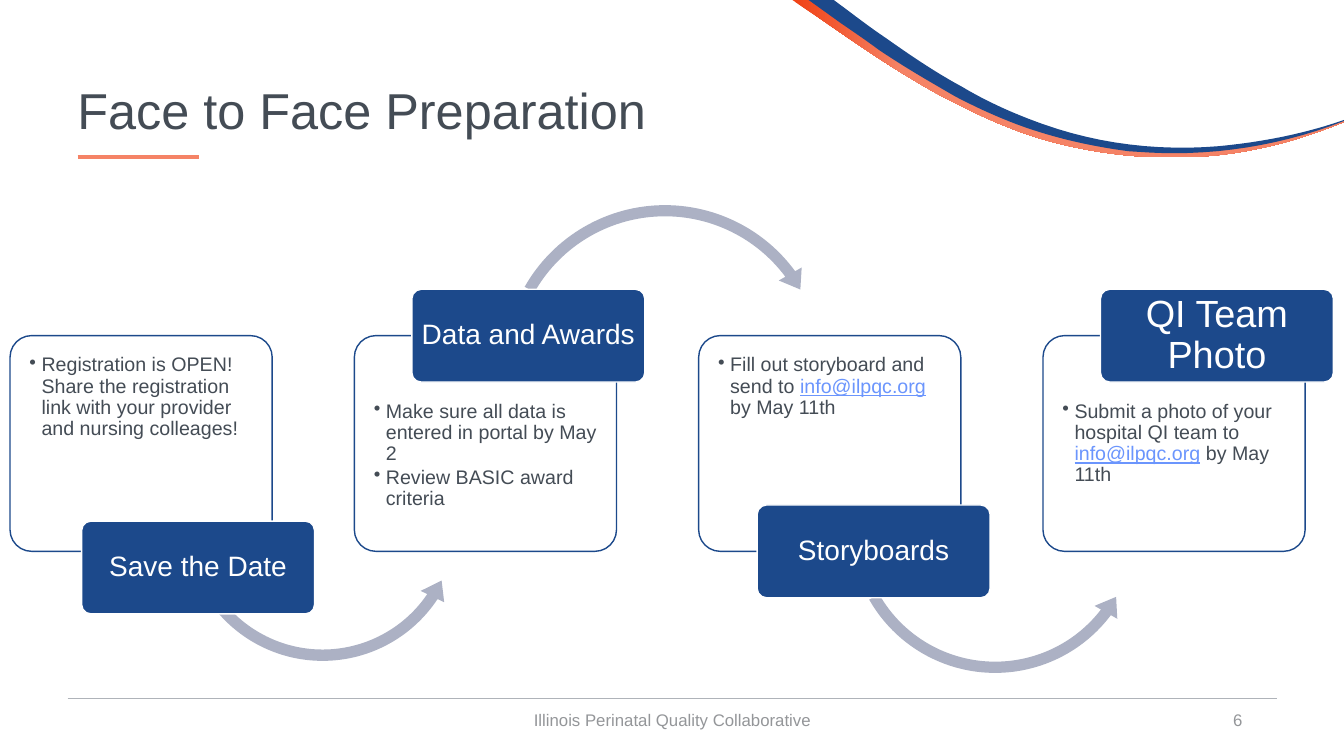
import pptx
import pptx.util
import pptx.dml.color
import pptx.enum.shapes
import pptx.enum.text
import pptx.oxml.ns
from lxml import etree

Inches = pptx.util.Inches
Pt = pptx.util.Pt
RGBColor = pptx.dml.color.RGBColor
MSO_SHAPE = pptx.enum.shapes.MSO_SHAPE
ALIGN = pptx.enum.text.PP_ALIGN
ANCHOR = pptx.enum.text.MSO_ANCHOR
qn = pptx.oxml.ns.qn

WHITE = RGBColor(0xFF, 0xFF, 0xFF)
NAVY = RGBColor(0x1C, 0x49, 0x8B)
ORANGE = RGBColor(0xF0, 0x41, 0x15)
CORAL = RGBColor(0xF5, 0x83, 0x66)
SLATE = RGBColor(0x44, 0x4C, 0x55)
GREY = RGBColor(0x94, 0x96, 0x99)
RULE = RGBColor(0xAF, 0xB3, 0xB9)
ARROW = RGBColor(0xAC, 0xB1, 0xC4)
LINK = RGBColor(0x6B, 0x95, 0xFD)

EMAIL = "info@ilpqc.org"
CARD_LEFT, CARD_TOP, CARD_PITCH = 0.1, 3.33, 3.415
CARD_W, CARD_H = 2.6, 2.14
LABEL_W, LABEL_H = 2.31, 0.92

# Swooshes: start point, then line ends (2 numbers) or Bezier curves (6 numbers)
CORAL_SWOOSH = [
    (7.86, 0), (8.05, 0), (8.1, 0.04),
    (8.34, 0.21, 8.58, 0.38, 8.82, 0.54), (9.07, 0.71, 9.32, 0.86, 9.58, 0.99),
    (9.84, 1.13, 10.11, 1.24, 10.39, 1.33), (10.8, 1.46, 11.24, 1.52, 11.68, 1.52),
    (12.24, 1.52, 12.8, 1.41, 13.33, 1.2), (13.33, 1.21),
    (12.8, 1.43, 12.25, 1.56, 11.69, 1.56), (11.24, 1.57, 10.8, 1.51, 10.37, 1.39),
    (10.09, 1.31, 9.81, 1.19, 9.55, 1.06), (9.28, 0.93, 9.03, 0.78, 8.78, 0.62),
    (8.53, 0.46, 8.29, 0.29, 8.04, 0.12),
]
NAVY_SWOOSH = [
    (8.02, 0), (8.27, 0), (8.43, 0.12),
    (8.55, 0.21, 8.67, 0.3, 8.79, 0.38), (9.03, 0.55, 9.28, 0.72, 9.54, 0.86),
    (9.79, 1.01, 10.06, 1.13, 10.34, 1.23), (10.9, 1.43, 11.5, 1.5, 12.09, 1.45),
    (12.51, 1.41, 12.93, 1.33, 13.33, 1.19), (13.33, 1.2),
    (12.8, 1.41, 12.22, 1.52, 11.64, 1.52), (11.49, 1.52, 11.34, 1.51, 11.19, 1.5),
    (10.89, 1.46, 10.6, 1.4, 10.31, 1.31), (10.02, 1.22, 9.75, 1.1, 9.48, 0.96),
    (9.22, 0.81, 8.96, 0.66, 8.71, 0.49), (8.59, 0.4, 8.47, 0.32, 8.34, 0.23),
]


def trace(segments, steps=12):
    """Turn lines and Bezier curves into a list of points."""
    points = [segments[0]]
    for seg in segments[1:]:
        if len(seg) == 2:
            points.append(seg)
            continue
        ctrl = [points[-1], seg[:2], seg[2:4], seg[4:]]
        for n in range(1, steps + 1):
            t = n / steps
            weights = ((1 - t) ** 3, 3 * t * (1 - t) ** 2, 3 * t * t * (1 - t), t ** 3)
            points.append(tuple(sum(w * c[axis] for w, c in zip(weights, ctrl))
                                for axis in (0, 1)))
    return points


class Deck:
    font = "Arial"

    def __init__(self):
        self.prs = pptx.Presentation()
        self.prs.slide_width, self.prs.slide_height = Inches(13.33), Inches(7.5)
        self.slide = self.prs.slides.add_slide(self.prs.slide_layouts[6])

    def style(self, run, size, color):
        run.font.name, run.font.size, run.font.color.rgb = self.font, Pt(size), color

    def frame(self, sp, margins, anchor):
        tf = sp.text_frame
        tf.word_wrap, tf.vertical_anchor = True, anchor
        tf.margin_left, tf.margin_top, tf.margin_right, tf.margin_bottom = map(Inches, margins)
        return tf

    def text(self, x, y, w, h, text, size, color, align=ALIGN.LEFT):
        sp = self.slide.shapes.add_textbox(Inches(x), Inches(y), Inches(w), Inches(h))
        tf = self.frame(sp, (0.1, 0.05, 0.1, 0.05), ANCHOR.MIDDLE)
        tf.text = text
        p = tf.paragraphs[0]
        p.alignment, p.line_spacing = align, 0.9
        self.style(p.runs[0], size, color)

    def shape(self, kind, x, y, w, h, fill, line=None, adjust=(0.1,)):
        sp = self.slide.shapes.add_shape(kind, Inches(x), Inches(y), Inches(w), Inches(h))
        sp.shadow.inherit = False
        for i, value in enumerate(adjust):
            sp.adjustments[i] = value
        sp.fill.solid()
        sp.fill.fore_color.rgb = fill
        if line is None:
            sp.line.fill.background()
        else:
            sp.line.color.rgb, sp.line.width = line, Pt(1)
        return sp

    def card(self, x, bullets, text_top):
        sp = self.shape(MSO_SHAPE.ROUNDED_RECTANGLE, x, CARD_TOP, CARD_W, CARD_H, WHITE, NAVY)
        color = sp.fill._xPr.find(".//" + qn("a:srgbClr"))
        etree.SubElement(color, qn("a:alpha"), val="90000")
        tf = self.frame(sp, (0.13, text_top, 0.13, 0.13), ANCHOR.TOP)
        for i, parts in enumerate(bullets):
            p = tf.add_paragraph() if i else tf.paragraphs[0]
            pPr = p._p.get_or_add_pPr()
            pPr.set("marL", str(Inches(0.12)))
            pPr.set("indent", str(-Inches(0.12)))
            etree.SubElement(pPr, qn("a:buChar"), char="•")
            p.alignment, p.line_spacing, p.space_after = ALIGN.LEFT, 0.9, Pt(2)
            for part in parts:
                r = p.add_run()
                r.text = part
                self.style(r, 14, LINK if part == EMAIL else SLATE)
                r.font.underline = True if part == EMAIL else None

    def label(self, x, y, text, size):
        sp = self.shape(MSO_SHAPE.ROUNDED_RECTANGLE, x, y, LABEL_W, LABEL_H, NAVY, WHITE)
        tf = self.frame(sp, (0.04, 0.03, 0.04, 0.03), ANCHOR.MIDDLE)
        tf.text = text
        p = tf.paragraphs[0]
        p.alignment, p.line_spacing = ALIGN.CENTER, 0.9
        self.style(p.runs[0], size, WHITE)

    def rule(self, x1, x2, y, color, width):
        line = self.slide.shapes.add_connector(
            pptx.enum.shapes.MSO_CONNECTOR.STRAIGHT,
            Inches(x1), Inches(y), Inches(x2), Inches(y))
        line.line.color.rgb, line.line.width = color, Pt(width)
        etree.SubElement(line._element.spPr, qn("a:effectLst"))

    def swoosh(self, segments, colors):
        points = [(Inches(x), Inches(y)) for x, y in trace(segments)]
        builder = self.slide.shapes.build_freeform(*points[0])
        builder.add_line_segments(points[1:], close=True)
        sp = builder.convert_to_shape()
        sp.shadow.inherit = False
        sp.line.fill.background()
        if len(colors) == 1:
            sp.fill.solid()
            sp.fill.fore_color.rgb = colors[0]
        else:
            sp.fill.gradient()
            sp.fill.gradient_angle = 0
            for stop, color, position in zip(sp.fill.gradient_stops, colors, (0, 0.2)):
                stop.color.rgb, stop.position = color, position


# Steps: label, size, label offset and top, card text top, bullets, arrow
LEFT, RIGHT = MSO_SHAPE.LEFT_CIRCULAR_ARROW, MSO_SHAPE.CIRCULAR_ARROW
STEPS = [
    ("Save the Date", 20, 0.71, 5.17, 0.13,
     [["Registration is OPEN! Share the registration link with your provider "
       "and nursing colleages!"]],
     (LEFT, 1.76, 3.75, 2.88, (0.039, 4.82, 20.267, 87.937, 0.045))),
    ("Data and Awards", 20, 0.57, 2.87, 0.59,
     [["Make sure all data is entered in portal by May 2"], ["Review BASIC award criteria"]],
     (RIGHT, 4.92, 1.96, 3.35, (0.033, 4.091, 194.154, 125.755, 0.039))),
    ("Storyboards", 20, 0.58, 5.01, 0.13,
     [["Fill out storyboard and send to ", EMAIL, " by May 11th"]],
     (LEFT, 8.36, 3.73, 3.02, (0.037, 4.579, 22.335, 90.245, 0.043))),
    ("QI Team Photo", 27, 0.57, 2.87, 0.59,
     [["Submit a photo of your hospital QI team to ", EMAIL, " by May 11th"]], None),
]


def main():
    deck = Deck()
    # Background decoration
    deck.swoosh(CORAL_SWOOSH, (ORANGE, CORAL))
    deck.swoosh(NAVY_SWOOSH, (NAVY,))
    deck.rule(0.67, 12.67, 6.93, RULE, 0.5)
    deck.rule(0.77, 1.97, 1.56, CORAL, 2.5)
    # Footer and title
    deck.text(4.42, 6.95, 4.5, 0.4, "Illinois Perinatal Quality Collaborative", 12, GREY,
              ALIGN.CENTER)
    deck.text(9.42, 6.95, 3, 0.4, "6", 12, GREY, ALIGN.RIGHT)
    deck.text(0.67, 0.4, 12, 1.45, "Face to Face Preparation", 36, SLATE)
    # Process steps
    for i, (name, size, offset, top, text_top, bullets, arrow) in enumerate(STEPS):
        x = CARD_LEFT + i * CARD_PITCH
        deck.card(x, bullets, text_top)
        if arrow:
            kind, left, arrow_top, side, adjust = arrow
            deck.shape(kind, left, arrow_top, side, side, ARROW, adjust=adjust)
        deck.label(x + offset, top, name, size)
    deck.prs.save("out.pptx")


if __name__ == "__main__":
    main()
